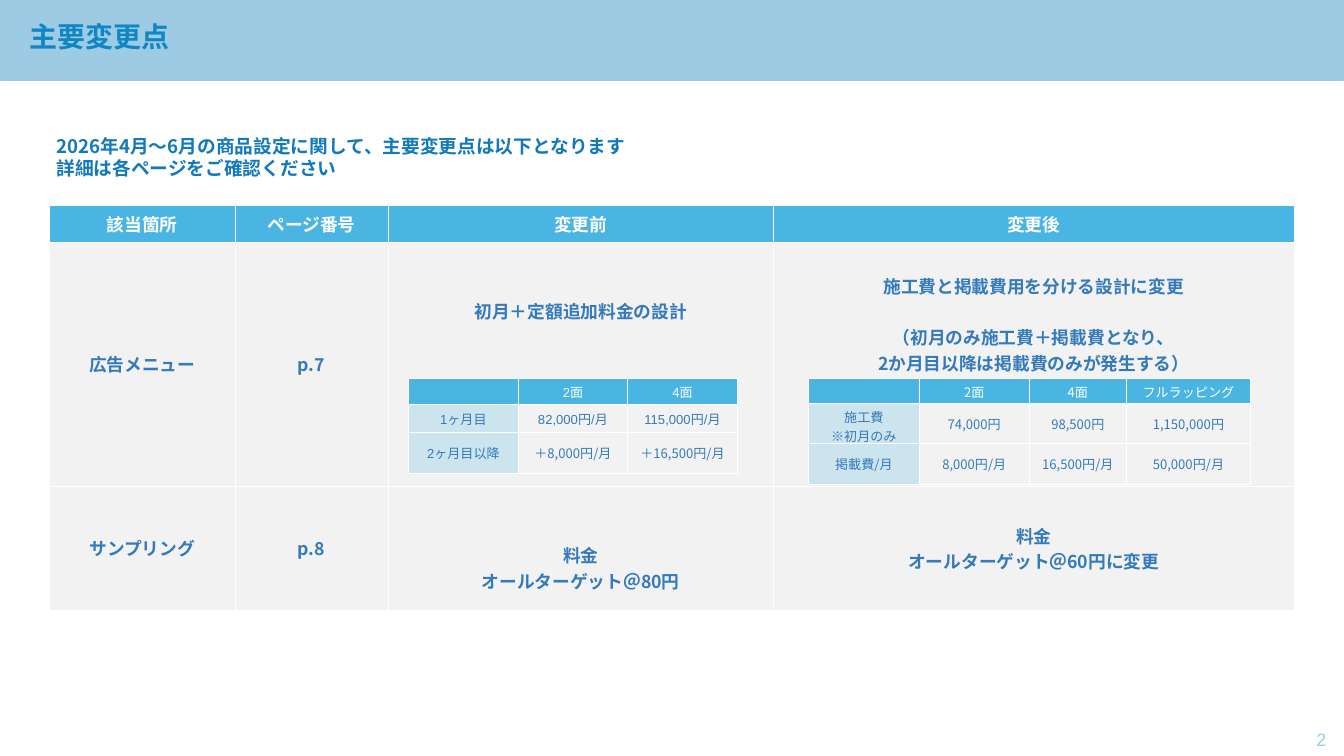
"""Build the slide that lists the main changes in advertising products and prices."""
from dataclasses import dataclass

import pptx
import pptx.dml.color
import pptx.enum.shapes
import pptx.enum.text
import pptx.oxml.ns
import pptx.util
from lxml import etree

Pt = pptx.util.Pt
Anchor = pptx.enum.text.MSO_ANCHOR
Align = pptx.enum.text.PP_ALIGN

SANS = "Noto Sans CJK JP"
WHITE, BLUE, PALE_BLUE, GREY, TEXT_BLUE = "FFFFFF", "4AB5E3", "CCE4EE", "F2F2F2", "357ABA"
BAND_BLUE = "9DCBE3"
BLANK_LINE = 27.5


@dataclass
class Cell:
    """Text of a table cell, with extra room above it and above one of its lines."""
    text: str
    inset_top: float = 5
    anchor: Anchor = Anchor.MIDDLE
    gap_line: int = 0


@dataclass
class Grid:
    """A table with a header row and an optional tinted first column."""
    left: float
    top: float
    columns: list[float]
    rows: list[float]
    cells: list[list[str | Cell]]
    size: float
    bold: bool = False
    font: str = SANS
    label_fill: str = PALE_BLUE
    header_anchor: Anchor = Anchor.TOP


@dataclass
class Label:
    """A free-standing text box."""
    box: tuple[float, float, float, float]
    text: str
    size: float
    color: str
    font: str = SANS
    bold: bool = True
    pitch: float | None = None
    anchor: Anchor = Anchor.TOP
    auto_size: pptx.enum.text.MSO_AUTO_SIZE = pptx.enum.text.MSO_AUTO_SIZE.NONE


def rgb(value: str) -> pptx.dml.color.RGBColor:
    """Turn a hex string into a colour."""
    return pptx.dml.color.RGBColor.from_string(value)


def set_attributes(target: object, values: dict) -> None:
    """Set every named attribute on the target."""
    for name, value in values.items():
        setattr(target, name, value)


def write_run(paragraph, text: str, font: str, size: float, bold: bool, color: str) -> None:
    """Add a formatted run whose East Asian glyphs use the Japanese sans face."""
    run = paragraph.add_run()
    run.text = text
    run.font.color.rgb = rgb(color)
    set_attributes(run.font, {"name": font, "size": Pt(size), "bold": bold})
    properties = run._r.get_or_add_rPr()
    etree.SubElement(properties, pptx.oxml.ns.qn("a:ea"), typeface=SANS)


def draw_label(slide, label: Label) -> None:
    """Draw a text box with one paragraph per line."""
    shape = slide.shapes.add_textbox(*(Pt(length) for length in label.box))
    frame = shape.text_frame
    set_attributes(frame, {"word_wrap": True, "vertical_anchor": label.anchor,
                           "auto_size": label.auto_size})
    for index, line in enumerate(label.text.split("\n")):
        paragraph = frame.add_paragraph() if index else frame.paragraphs[0]
        if label.pitch:
            paragraph.line_spacing = Pt(label.pitch)
        write_run(paragraph, line, label.font, label.size, label.bold, label.color)


def fill_cell(table_cell, cell: Cell, grid: Grid, font: str, fill: str, color: str) -> None:
    """Fill one table cell and write its centred lines."""
    set_attributes(table_cell, {
        "margin_left": Pt(10), "margin_right": Pt(10), "margin_top": Pt(cell.inset_top),
        "margin_bottom": Pt(5), "vertical_anchor": cell.anchor})
    table_cell.fill.solid()
    table_cell.fill.fore_color.rgb = rgb(fill)
    frame = table_cell.text_frame
    if not cell.text:
        etree.SubElement(frame.paragraphs[0]._p, pptx.oxml.ns.qn("a:endParaRPr"),
                         sz=str(round(grid.size * 100)))
        return
    for index, line in enumerate(cell.text.split("\n")):
        paragraph = frame.add_paragraph() if index else frame.paragraphs[0]
        paragraph.alignment = Align.CENTER
        if index and index == cell.gap_line:
            paragraph.space_before = Pt(BLANK_LINE)
        write_run(paragraph, line, font, grid.size, grid.bold, color)


def draw_grid(slide, grid: Grid) -> None:
    """Draw a table with its header, label column and values."""
    shape = slide.shapes.add_table(
        len(grid.rows), len(grid.columns), Pt(grid.left), Pt(grid.top),
        Pt(sum(grid.columns)), Pt(sum(grid.rows)))
    table = shape.table
    for column, width in zip(table.columns, grid.columns):
        column.width = Pt(width)
    for row, height in zip(table.rows, grid.rows):
        row.height = Pt(height)
    for row_index, row in enumerate(grid.cells):
        for column_index, content in enumerate(row):
            cell = content if isinstance(content, Cell) else Cell(content)
            fill, color = (grid.label_fill if column_index == 0 else GREY), TEXT_BLUE
            if row_index == 0:
                fill, color, cell.anchor = BLUE, WHITE, grid.header_anchor
            font = SANS if "＋" in cell.text else grid.font
            fill_cell(table.cell(row_index, column_index), cell, grid, font, fill, color)


LABELS = [
    Label((24.3, 19.6, 1242, 43.2), "主要変更点", 30, "1086C4", pitch=34),
    Label((53.3, 141.1, 1103.8, 55.4),
          "2026年4月～6月の商品設定に関して、主要変更点は以下となります\n詳細は各ページをご確認ください",
          20, "1279BA", pitch=23.6,
          auto_size=pptx.enum.text.MSO_AUTO_SIZE.SHAPE_TO_FIT_TEXT),
    Label((1403.3, 775.6, 36.7, 32.4), "2", 19.1, BAND_BLUE, "Arial", False,
          anchor=Anchor.MIDDLE),
]

BELOW_ONE_LINE = {"inset_top": 5 + BLANK_LINE, "anchor": Anchor.TOP}
BELOW_TWO_LINES = {"inset_top": 5 + 2 * BLANK_LINE, "anchor": Anchor.TOP}

GRIDS = [
    Grid(53.1, 220.1, [198.7, 164, 413, 557.7], [39.6, 261.2, 133], [
        ["該当箇所", "ページ番号", "変更前", "変更後"],
        ["広告メニュー", "p.7", Cell("初月＋定額追加料金の設計", **BELOW_TWO_LINES),
         Cell("施工費と掲載費用を分ける設計に変更\n（初月のみ施工費＋掲載費となり、\n"
              "2か月目以降は掲載費のみが発生する）", gap_line=1, **BELOW_ONE_LINE)],
        ["サンプリング", "p.8", Cell("料金\nオールターゲット＠80円", **BELOW_TWO_LINES),
         "料金\nオールターゲット＠60円に変更"],
    ], 19, bold=True, label_fill=GREY, header_anchor=Anchor.MIDDLE),
    Grid(437.8, 405, [117.4] * 3, [28.6, 29.9, 29.9], [
        ["", "2面", "4面"],
        ["1ヶ月目", "82,000円/月", "115,000円/月"],
        ["2ヶ月目以降", "＋8,000円/月", "＋16,500円/月"],
    ], 14, font="Arial"),
    Grid(866.4, 405, [118.4, 118.2, 103.8, 133.2], [26.6, 38.9, 24.5], [
        ["", "2面", "4面", "フルラッピング"],
        ["施工費\n※初月のみ", "74,000円", "98,500円", "1,150,000円"],
        ["掲載費/月", "8,000円/月", "16,500円/月", "50,000円/月"],
    ], 14),
]


def main() -> None:
    """Build and save the presentation."""
    presentation = pptx.Presentation()
    set_attributes(presentation, {"slide_width": Pt(1440), "slide_height": Pt(810)})
    slide = presentation.slides.add_slide(presentation.slide_layouts[6])
    band = slide.shapes.add_shape(
        pptx.enum.shapes.MSO_SHAPE.RECTANGLE, 0, 0, Pt(1440), Pt(86.4))
    band.shadow.inherit = False
    band.fill.solid()
    band.fill.fore_color.rgb = band.line.color.rgb = rgb(BAND_BLUE)
    band.line.width = Pt(1)
    for label in LABELS:
        draw_label(slide, label)
    for grid in GRIDS:
        draw_grid(slide, grid)
    presentation.save("out.pptx")


if __name__ == "__main__":
    main()
